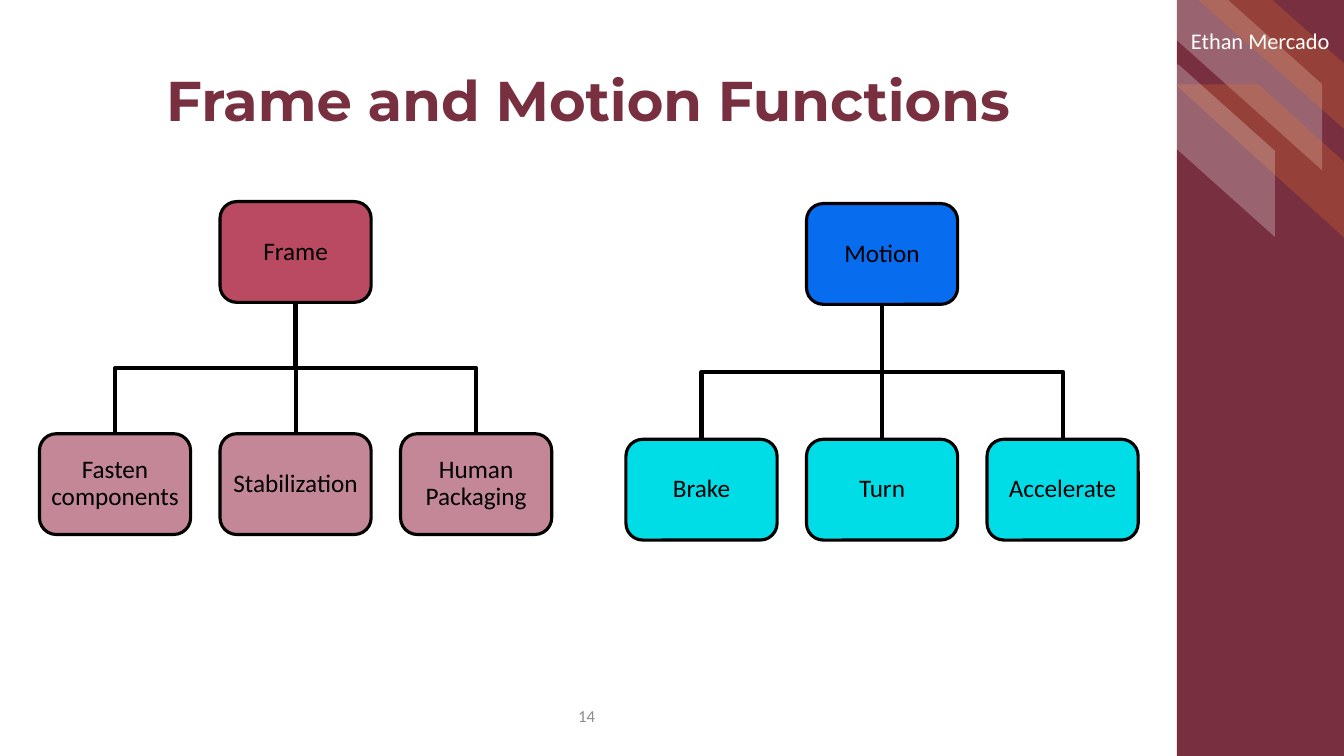
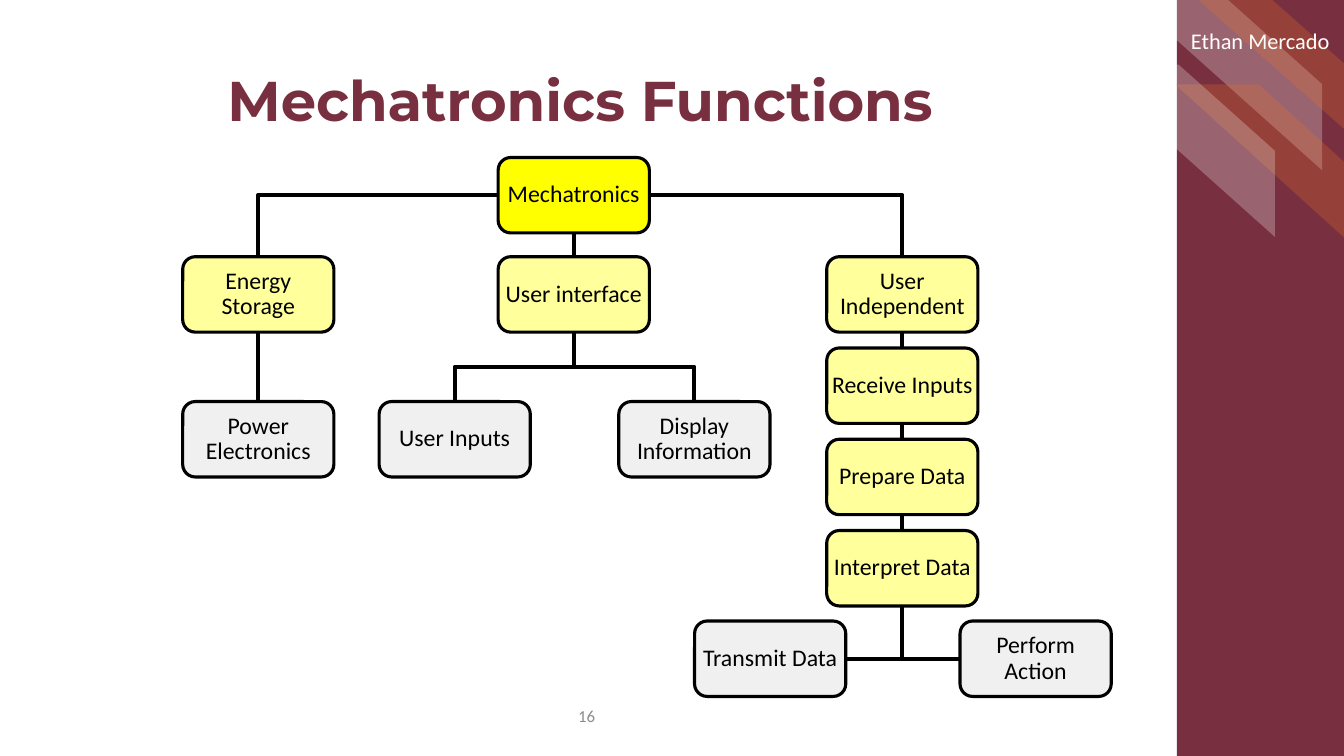
from lxml.etree import SubElement
from pptx import Presentation
from pptx.dml.color import RGBColor
from pptx.enum.shapes import MSO_CONNECTOR as Line, MSO_SHAPE as Shape
from pptx.enum.text import MSO_ANCHOR as Anchor, PP_ALIGN as Align
from pptx.oxml.ns import qn
from pptx.util import Cm, Pt

MAROON, ORANGE, WHITE, BLACK, GREY = "782F40", "EE7624", "FFFFFF", "000000", "8C8C8C"
YELLOW, PALE_YELLOW, PALE_GREY = "FFFF00", "FFFF9B", "F0F0F0"

# left, top, width, height, colour, inner edge of the stripe
STRIPES = [
    (28.47, -0.05, 4.85, 4.34, WHITE, 0.5),
    (29.62, 2.13, 4.29, 3.89, ORANGE, 0.51),
    (27.28, 1.63, 4.85, 4.34, WHITE, 0.5),
    (30.2, 0, 3.73, 3.3, ORANGE, 0.5),
]


def rgb(colour):
    return RGBColor.from_string(colour)


class Deck:
    """Shared style, plus the page being drawn; lengths are in centimetres."""

    text_styles = {
        "title": {"name": "Montserrat", "size": Pt(40), "bold": True},
        "label": {"name": "Calibri", "size": Pt(18)},
        "small label": {"name": "Calibri", "size": Pt(17)},
        "name": {"name": "Calibri", "size": Pt(16)},
        "number": {"name": "Calibri", "size": Pt(12)},
    }
    box_width = 3.81

    def __init__(self):
        self.file = Presentation()
        self.file.slide_width, self.file.slide_height = Cm(33.87), Cm(19.05)
        self.shapes = None

    def new_page(self, title, number):
        page = self.file.slides.add_slide(self.file.slide_layouts[6])
        self.shapes = page.shapes
        self.panel(Shape.RECTANGLE, 29.66, 0, 4.21, 19.05, MAROON)
        for left, top, width, height, colour, edge in STRIPES:
            self.stripe(left, top, width, height, colour, edge)
        self.text(number, 13.77, 17.7, 2.03, 0.76, "number", GREY)
        self.text(title, 1.27, 1.27, 27.1, 2.67, "title", MAROON, margin=0)
        self.text("Ethan Mercado", 29.64, 0, 4.24, 2.11, "name", WHITE)

    def panel(self, kind, left, top, width, height, colour):
        panel = self.shapes.add_shape(kind, Cm(left), Cm(top), Cm(width), Cm(height))
        panel.shadow.inherit = False
        panel.fill.solid()
        panel.fill.fore_color.rgb = rgb(colour)
        panel.line.fill.background()
        return panel

    def stripe(self, left, top, width, height, colour, edge):
        """Mirrored diagonal stripe, a quarter opaque."""
        stripe = self.panel(Shape.DIAGONAL_STRIPE, left, top, width, height, colour)
        stripe.adjustments[0] = edge
        properties = stripe._element.spPr
        properties.find(qn("a:xfrm")).set("flipH", "1")
        tint = properties.find(qn("a:solidFill"))[0]
        SubElement(tint, qn("a:alpha")).set("val", "25000")

    def text(self, words, left, top, width, height, style, colour, margin=0.25):
        box = self.shapes.add_textbox(Cm(left), Cm(top), Cm(width), Cm(height))
        self.fill_frame(box.text_frame, words, style, colour, margin)

    def fill_frame(self, frame, words, style, colour, margin):
        layout = {
            "word_wrap": True, "vertical_anchor": Anchor.MIDDLE,
            "margin_left": Cm(margin), "margin_right": Cm(margin),
            "margin_top": Cm(margin / 2), "margin_bottom": Cm(margin / 2),
        }
        for key, value in layout.items():
            setattr(frame, key, value)
        para = frame.paragraphs[0]
        para.alignment, para.line_spacing = Align.CENTER, 0.9
        span = para.add_run()
        span.text = words
        for key, value in self.text_styles[style].items():
            setattr(span.font, key, value)
        span.font.color.rgb = rgb(colour)

    def box(self, words, centre, top, height, colour, style):
        box = self.panel(Shape.ROUNDED_RECTANGLE, centre - self.box_width / 2, top,
                         self.box_width, height, colour)
        box.line.color.rgb = rgb(BLACK)
        box.line.width = Pt(2.25)
        self.fill_frame(box.text_frame, words, style, BLACK, margin=0)
        return box

    def connector(self, kind, start, end):
        line = self.shapes.add_connector(kind, *start, *end)
        line.line.color.rgb = rgb(BLACK)
        line.line.width = Pt(3)
        SubElement(line._element.spPr, qn("a:effectLst"))
        return line

    def elbow_down(self, start, end):
        """Elbow that leaves its start downwards: a level elbow, turned."""
        (x1, y1), (x2, y2) = start, end
        across, down = abs(x2 - x1), y2 - y1
        left, top = (x1 + x2 - down) // 2, (y1 + y2 - across) // 2
        line = self.connector(Line.ELBOW, (left, top), (left + down, top + across))
        turn = {"rot": "5400000"} if x2 < x1 else {"rot": "16200000", "flipH": "1"}
        for key, value in turn.items():
            line._element.spPr.find(qn("a:xfrm")).set(key, value)
        return line

    def link_below(self, parent, child):
        """From the foot of the parent to the top of the child."""
        start, end = foot(parent), head(child)
        if start[0] == end[0]:
            self.connector(Line.STRAIGHT, start, end)
        else:
            self.elbow_down(start, end)

    def link_from_side(self, parent, child):
        """From the near side of the parent to the top of the child."""
        end = head(child)
        one_bend(self.connector(Line.ELBOW, near_side(parent, end[0]), end))

    def link_to_side(self, parent, child):
        """From the foot of the parent to the near side of the child."""
        start = foot(parent)
        one_bend(self.elbow_down(start, near_side(child, start[0])))


def head(box):
    return box.left + box.width // 2, box.top


def foot(box):
    return box.left + box.width // 2, box.top + box.height


def near_side(box, x):
    """Middle of the side of the box that faces x."""
    edge = box.left if x < box.left else box.left + box.width
    return edge, box.top + box.height // 2


def one_bend(line):
    line._element.spPr.find(qn("a:prstGeom")).set("prst", "bentConnector2")


def frame_and_motion(deck):
    deck.new_page("Frame and Motion Functions", "14")
    trees = [
        ("Frame", "BA4962", ["Fasten components", "Stabilization", "Human Packaging"],
         "C48797", 7.45, 5.08, 10.93),
        ("Motion", "076CEE", ["Brake", "Turn", "Accelerate"],
         "00DDE7", 22.23, 5.13, 11.07),
    ]
    for root, root_colour, leaves, leaf_colour, centre, root_top, leaf_top in trees:
        parent = deck.box(root, centre, root_top, 2.54, root_colour, "label")
        for place, leaf in enumerate(leaves, start=-1):
            child = deck.box(leaf, centre + 4.55 * place, leaf_top, 2.54, leaf_colour, "label")
            deck.link_below(parent, child)


def mechatronics(deck):
    deck.new_page("Mechatronics Functions ", "16")
    left, middle, right = 6.51, 14.46, 22.74
    branch_top, leaf_top, last_top, step = 6.47, 10.12, 15.65, 2.3

    def node(words, centre, top, colour):
        return deck.box(words, centre, top, 1.9, colour, "small label")

    root = node("Mechatronics", middle, 3.97, YELLOW)
    storage = node("Energy Storage", left, branch_top, PALE_YELLOW)
    interface = node("User interface", middle, branch_top, PALE_YELLOW)
    steps = ["User Independent", "Receive Inputs", "Prepare Data", "Interpret Data"]
    chain = [node(words, right, branch_top + step * place, PALE_YELLOW)
             for place, words in enumerate(steps)]

    deck.link_below(root, interface)
    for branch in (storage, chain[0]):
        deck.link_from_side(root, branch)
    for upper, lower in zip(chain, chain[1:]):
        deck.link_below(upper, lower)
    for parent, words, centre in [(storage, "Power Electronics", left),
                                  (interface, "User Inputs", 11.46),
                                  (interface, "Display Information", 17.5)]:
        deck.link_below(parent, node(words, centre, leaf_top, PALE_GREY))
    for words, centre in [("Transmit Data", 19.41), ("Perform Action", 26.1)]:
        deck.link_to_side(chain[-1], node(words, centre, last_top, PALE_GREY))


def main():
    deck = Deck()
    frame_and_motion(deck)
    mechatronics(deck)
    deck.file.save("out.pptx")


if __name__ == "__main__":
    main()
